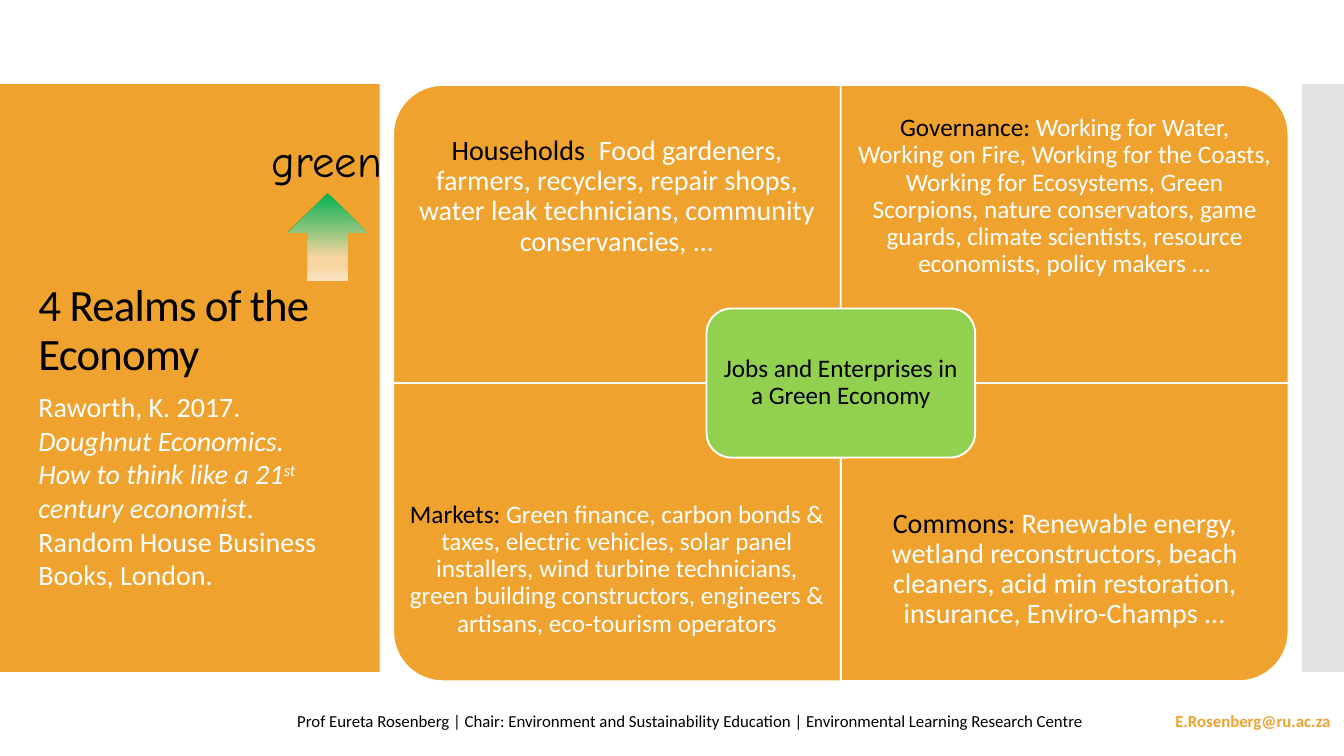
from lxml.etree import SubElement
from pptx import Presentation
from pptx.dml.color import RGBColor
from pptx.enum.shapes import MSO_SHAPE
from pptx.enum.text import MSO_ANCHOR, PP_ALIGN
from pptx.oxml.ns import qn
from pptx.util import Inches, Pt

COLS, ROWS = 160, 90
SLIDE_W, SLIDE_H = Inches(13.333), Inches(7.5)

ORANGE = RGBColor(0xF0, 0xA2, 0x2E)
LIME = RGBColor(0x92, 0xD0, 0x50)
GREY = RGBColor(0xC8, 0xC8, 0xC8)
BLACK = RGBColor(0, 0, 0)
WHITE = RGBColor(0xFF, 0xFF, 0xFF)
ARROW_STOPS = [
    (0, RGBColor(0x00, 0xB0, 0x50)),
    (74, RGBColor(0xF8, 0xD5, 0xA1)),
    (83, RGBColor(0xF8, 0xD5, 0xA1)),
    (100, RGBColor(0xFA, 0xE3, 0xC0)),
]

MATRIX_X, MATRIX_Y = 46.8, 10.1
CELL_W, CELL_H = 53.3, 35.5

REALMS = [
    (0, 0, 270, 20, [
        ("Households", BLACK), (":", LIME),
        (" Food gardeners, farmers, recyclers, repair shops, water leak "
         "technicians, community conservancies, ...", WHITE)]),
    (1, 0, 0, 18, [
        ("Governance: ", BLACK),
        ("Working for Water, Working on Fire, Working for the Coasts, Working "
         "for Ecosystems, Green Scorpions, nature conservators, game guards, "
         "climate scientists, resource economists, policy makers ...", WHITE)]),
    (0, 1, 180, 18, [
        ("Markets: ", BLACK),
        ("Green finance, carbon bonds & taxes, electric vehicles, solar panel "
         "installers, wind turbine technicians, green building constructors, "
         "engineers & artisans, eco-tourism operators", WHITE)]),
    (1, 1, 90, 20, [
        ("Commons: ", BLACK),
        ("Renewable energy, wetland reconstructors, beach cleaners, acid min "
         "restoration, insurance, Enviro-Champs ...", WHITE)]),
]


def place(x, y, w, h):
    """Turn grid columns and rows into slide lengths."""
    return (round(SLIDE_W * x / COLS), round(SLIDE_H * y / ROWS),
            round(SLIDE_W * w / COLS), round(SLIDE_H * h / ROWS))


def add_block(s, kind, box, color, outlined=False):
    """Add a filled preset shape, with a white outline if asked."""
    sp = s.shapes.add_shape(kind, *place(*box))
    sp.shadow.inherit = False
    sp.fill.solid()
    sp.fill.fore_color.rgb = color
    if outlined:
        sp.line.color.rgb = WHITE
        sp.line.width = Pt(1.35)
    else:
        sp.line.fill.background()
    return sp


def add_text(s, box, runs, size, align=PP_ALIGN.LEFT, anchor=MSO_ANCHOR.TOP,
             font="Calibri", spacing=None, inset=None):
    """Add a one-paragraph text box made of coloured runs."""
    tf = s.shapes.add_textbox(*place(*box)).text_frame
    tf.word_wrap = True
    tf.vertical_anchor = anchor
    if inset is not None:
        tf.margin_left = tf.margin_right = Inches(inset)
        tf.margin_top = tf.margin_bottom = Inches(inset)
    p = tf.paragraphs[0]
    p.alignment = align
    p.line_spacing = spacing
    p.font.size = Pt(size)
    p.font.name = font
    for text, color in runs:
        r = p.add_run()
        r.text = text
        r.font.color.rgb = color
    return p


def add_realm(s, col, row, turn, size, runs):
    """Add one quadrant with its rounded corner facing outwards."""
    x, y = MATRIX_X + col * CELL_W, MATRIX_Y + row * CELL_H
    w, h = (CELL_H, CELL_W) if turn % 180 else (CELL_W, CELL_H)
    box = (x + (CELL_W - w) / 2, y + (CELL_H - h) / 2, w, h)
    sp = add_block(s, MSO_SHAPE.ROUND_1_RECTANGLE, box, ORANGE, outlined=True)
    sp.rotation = turn
    add_text(s, (x, y + row * CELL_H / 4, CELL_W, CELL_H * 3 / 4), runs, size,
             PP_ALIGN.CENTER, MSO_ANCHOR.MIDDLE, spacing=0.9, inset=size * 0.008)


def add_hub(s):
    """Add the rounded box where the four realms meet."""
    w, h = CELL_W * 0.6, CELL_H / 2
    box = (MATRIX_X + CELL_W - w / 2, MATRIX_Y + CELL_H - h / 2, w, h)
    add_block(s, MSO_SHAPE.ROUNDED_RECTANGLE, box, LIME, outlined=True)
    add_text(s, (box[0] + 0.9, box[1] + 0.9, w - 1.8, h - 1.8),
             [("Jobs and Enterprises in a Green Economy", BLACK)], 18,
             PP_ALIGN.CENTER, MSO_ANCHOR.MIDDLE, spacing=0.9, inset=0.07)


def add_green_arrow(s):
    """Add the gradient arrow and the word it points to."""
    sp = add_block(s, MSO_SHAPE.UP_ARROW, (34.3, 23, 9.4, 10.4), LIME)
    sp.fill.gradient()
    sp.fill.gradient_angle = 270
    stops = sp.fill._fill._gradFill.find(qn("a:gsLst"))
    stops.clear()
    for share, color in ARROW_STOPS:
        gs = SubElement(stops, qn("a:gs"), pos=str(share * 1000))
        SubElement(gs, qn("a:srgbClr"), val=str(color))
    add_text(s, (28.4, 15.2, 21, 7.7), [("green", BLACK)], 32,
             PP_ALIGN.CENTER, font="Comic Neue")


def add_side_panels(s):
    """Add the title panel on the left and the pale strip on the right."""
    add_block(s, MSO_SHAPE.RECTANGLE, (0, 10, 45.2, 70), ORANGE)
    strip = add_block(s, MSO_SHAPE.RECTANGLE, (155, 10, 5, 70), GREY)
    color = strip.fill._xPr.find(qn("a:solidFill"))[0]
    SubElement(color, qn("a:alpha"), val="50000")


def add_title_and_source(s):
    """Add the slide title and the book it draws on."""
    title = add_text(s, (3.4, 15, 37.2, 30.8),
                     [("4 Realms of the Economy", BLACK)], 32,
                     anchor=MSO_ANCHOR.BOTTOM, spacing=0.9)
    title.runs[0].font._element.set("spc", "-60")
    parts = ["Raworth, K. 2017. ",
             "Doughnut Economics. How to think like a 21", "st",
             " century economist", ". Random House Business Books, London."]
    source = add_text(s, (3.4, 45.8, 37.2, 30.5),
                      [(part, WHITE) for part in parts], 20)
    for r in source.runs[1:4]:
        r.font.italic = True
    source.runs[2].font._element.set("baseline", "30000")


def add_footer(s):
    """Add the author line and the e-mail address."""
    add_text(s, (34.2, 83.4, 101.5, 4.8),
             [("Prof Eureta Rosenberg | Chair: Environment and Sustainability "
               "Education | Environmental Learning Research Centre", BLACK)],
             12, anchor=MSO_ANCHOR.MIDDLE)
    email = add_text(s, (135.7, 83.4, 23.9, 4.8),
                     [("E.Rosenberg@ru.ac.za", ORANGE)], 12,
                     PP_ALIGN.RIGHT, MSO_ANCHOR.MIDDLE)
    email.font.bold = True


def main():
    """Build the slide and save it."""
    prs = Presentation()
    prs.slide_width, prs.slide_height = SLIDE_W, SLIDE_H
    s = prs.slides.add_slide(prs.slide_layouts[6])
    add_side_panels(s)
    add_title_and_source(s)
    add_footer(s)
    for realm in REALMS:
        add_realm(s, *realm)
    add_hub(s)
    add_green_arrow(s)
    prs.save("out.pptx")


if __name__ == "__main__":
    main()
